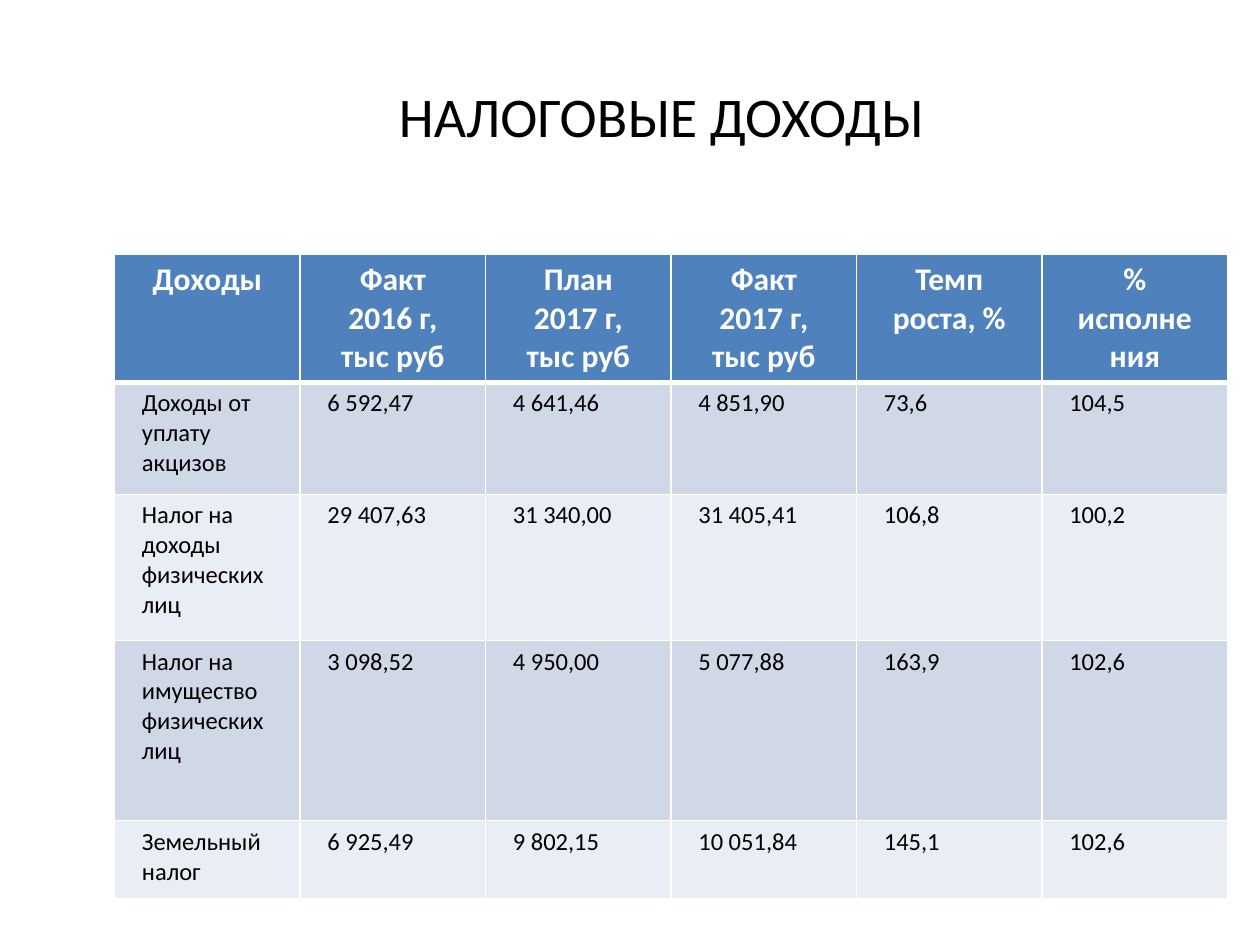
"""Build a slide with a table of tax revenues."""
from lxml.etree import SubElement
from pptx import Presentation
from pptx.dml.color import RGBColor
from pptx.enum.text import MSO_ANCHOR as Anchor, PP_ALIGN as Align
from pptx.oxml.ns import qn
from pptx.util import Pt

TITLE = "НАЛОГОВЫЕ ДОХОДЫ"
ROWS = [
    ("Доходы", "Факт 2016 г, тыс руб", "План 2017 г, тыс руб",
     "Факт 2017 г, тыс руб", "Темп роста, %", "% исполнения"),
    ("Доходы от уплату акцизов", "6 592,47", "4 641,46", "4 851,90", "73,6", "104,5"),
    ("Налог на доходы физических лиц", "29 407,63", "31 340,00", "31 405,41",
     "106,8", "100,2"),
    ("Налог на имущество физических лиц", "3 098,52", "4 950,00", "5 077,88",
     "163,9", "102,6"),
    ("Земельный налог", "6 925,49", "9 802,15", "10 051,84", "145,1", "102,6"),
]
HEIGHTS = [73, 64, 83.5, 103, 44.5]
LEFT, TOP, WIDTH = 65.5, 145.5, 636
HEADER, BANDS, WHITE, BLACK = "4F81BD", ("D0D8E8", "E9EDF4"), "FFFFFF", "000000"
MARGINS = {"margin_left": Pt(15.6), "margin_right": Pt(15.6),
           "margin_top": Pt(3.6), "margin_bottom": Pt(3.6)}


def rgb(value):
    return RGBColor.from_string(value)


def set_all(obj, values):
    for name, value in values.items():
        setattr(obj, name, value)


def write(tf, text, size, color, align, bold=False):
    p = tf.paragraphs[0]
    p.alignment = align
    r = p.add_run()
    r.text = text
    set_all(r.font, {"name": "Calibri", "size": Pt(size), "bold": bold})
    r.font.color.rgb = rgb(color)


def add_borders(cell, top, bottom):
    tc_pr = cell._tc.get_or_add_tcPr()
    widths = {"a:lnL": 1, "a:lnR": 1, "a:lnT": top, "a:lnB": bottom}
    for tag, width in widths.items():
        ln = SubElement(tc_pr, qn(tag), w=str(Pt(width)))
        fill = SubElement(ln, qn("a:solidFill"))
        SubElement(fill, qn("a:srgbClr"), val=WHITE)


def add_title(s):
    tf = s.shapes.add_textbox(Pt(60), Pt(21), Pt(636), Pt(90)).text_frame
    set_all(tf, {"word_wrap": True, "vertical_anchor": Anchor.MIDDLE})
    write(tf, TITLE, 32, BLACK, Align.CENTER)


def add_revenue_table(s):
    cols = len(ROWS[0])
    table = s.shapes.add_table(len(ROWS), cols, Pt(LEFT), Pt(TOP),
                               Pt(WIDTH), Pt(sum(HEIGHTS))).table
    for col in table.columns:
        col.width = Pt(WIDTH / cols)
    for i, (values, height) in enumerate(zip(ROWS, HEIGHTS)):
        table.rows[i].height = Pt(height)
        for j, text in enumerate(values):
            cell = table.cell(i, j)
            set_all(cell, MARGINS)
            add_borders(cell, 3 if i == 1 else 1, 3 if i == 0 else 1)
            cell.fill.solid()
            cell.fill.fore_color.rgb = rgb(BANDS[(i - 1) % 2] if i else HEADER)
            if i:
                write(cell.text_frame, text, 14, BLACK, Align.LEFT)
            else:
                write(cell.text_frame, text, 18, WHITE, Align.CENTER, True)


def main():
    prs = Presentation()
    set_all(prs, {"slide_width": Pt(720), "slide_height": Pt(540)})
    s = prs.slides.add_slide(prs.slide_layouts[6])
    add_title(s)
    add_revenue_table(s)
    prs.save("out.pptx")


if __name__ == "__main__":
    main()
